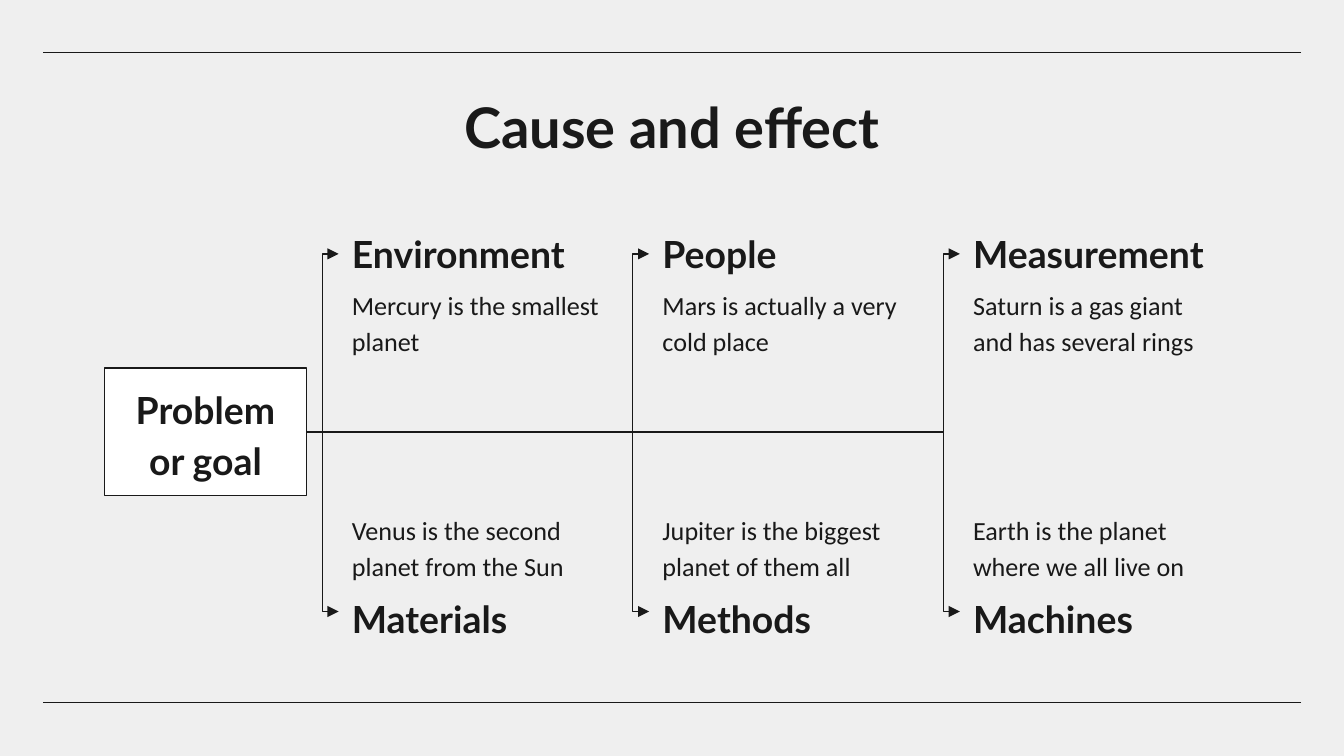
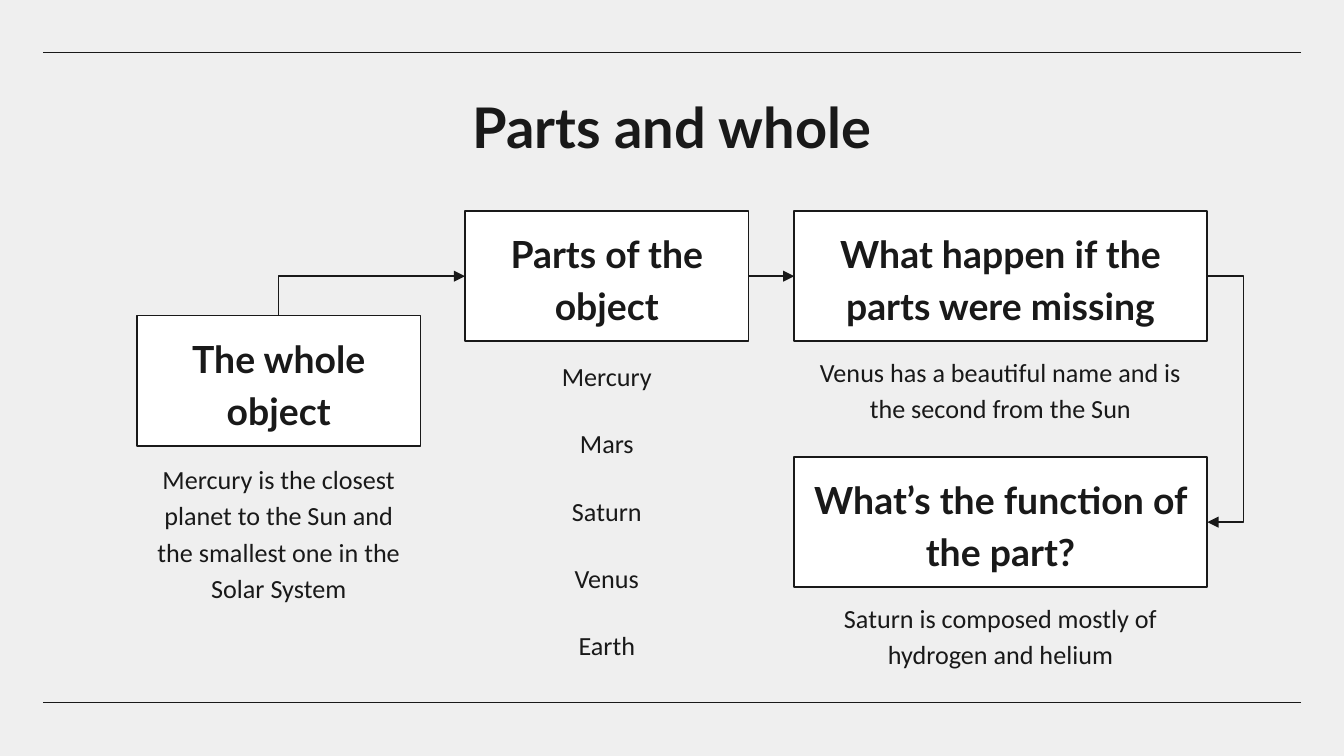
from lxml import etree
from pptx import Presentation
from pptx.dml.color import RGBColor
from pptx.enum.shapes import MSO_CONNECTOR, MSO_SHAPE
from pptx.enum.text import MSO_ANCHOR, PP_ALIGN
from pptx.oxml.ns import qn
from pptx.util import Cm, Pt

INK = RGBColor(0x19, 0x19, 0x19)
PAPER = RGBColor(0xEF, 0xEF, 0xEF)
WHITE = RGBColor(0xFF, 0xFF, 0xFF)
HEADING_FONT, BODY_FONT = "Lato", "Calibri"
LEFT, CENTER = PP_ALIGN.LEFT, PP_ALIGN.CENTER
TOP, MIDDLE, BOTTOM = MSO_ANCHOR.TOP, MSO_ANCHOR.MIDDLE, MSO_ANCHOR.BOTTOM
STRAIGHT, ELBOW = MSO_CONNECTOR.STRAIGHT, MSO_CONNECTOR.ELBOW
RECTANGLE = MSO_SHAPE.RECTANGLE

# All lengths below are in centimetres.
SLIDE_WIDTH, SLIDE_HEIGHT = 25.4, 14.29
RULE_MARGIN = 0.81
RULE_TOPS = (0.99, 13.28)
TITLE_BOX = (2, 1.5, 21.4, 1.6)

GOAL = "Problem or goal"
CAUSES = [  # upper heading and text, lower heading and text
    ("Environment", "Mercury is the smallest planet",
     "Materials", "Venus is the second planet from the Sun"),
    ("People", "Mars is actually a very cold place",
     "Methods", "Jupiter is the biggest planet of them all"),
    ("Measurement", "Saturn is a gas giant and has several rings",
     "Machines", "Earth is the planet where we all live on"),
]

WHOLE = ("The whole object",
         "Mercury is the closest planet to the Sun and the smallest one in the Solar System")
PARTS = ("Parts of the object", ["Mercury", "Mars", "Saturn", "Venus", "Earth"])
QUESTIONS = [
    ("What happen if the parts were missing",
     "Venus has a beautiful name and is the second from the Sun"),
    ("What’s the function of the part?",
     "Saturn is composed mostly of hydrogen and helium"),
]


def write(shape, text, size=14, font=BODY_FONT, bold=False, align=LEFT,
          anchor=TOP, spacing=1.15, side_inset=0.25):
    frame = shape.text_frame
    frame.word_wrap = True
    frame.vertical_anchor = anchor
    frame.margin_left = frame.margin_right = Cm(side_inset)
    frame.margin_top = frame.margin_bottom = Cm(0.25)
    paragraph = frame.paragraphs[0]
    paragraph.alignment = align
    paragraph.line_spacing = spacing
    run = paragraph.add_run()
    run.text = text
    run.font.size = Pt(size)
    run.font.name = font
    run.font.bold = bold
    run.font.color.rgb = INK


def add_text(slide, box, text, **text_format):
    write(slide.shapes.add_textbox(*map(Cm, box)), text, **text_format)


def add_heading(slide, box, text, size=20, **text_format):
    add_text(slide, box, text, size=size, font=HEADING_FONT, bold=True, **text_format)


def add_box(slide, box, text, **text_format):
    """Draw a white outlined rectangle holding a centred heading."""
    shape = slide.shapes.add_shape(RECTANGLE, *map(Cm, box))
    shape.shadow.inherit = False
    shape.fill.solid()
    shape.fill.fore_color.rgb = WHITE
    shape.line.color.rgb = INK
    shape.line.width = Pt(0.75)
    write(shape, text, size=20, font=HEADING_FONT, bold=True, align=CENTER, **text_format)


def add_line(slide, start, end, kind=STRAIGHT, arrow=True):
    connector = slide.shapes.add_connector(kind, *map(Cm, start + end))
    connector.line.color.rgb = INK
    connector.line.width = Pt(0.75)
    properties = connector._element.spPr
    if arrow:
        line = properties.find(qn("a:ln"))
        etree.SubElement(line, qn("a:tailEnd"), type="triangle")
    etree.SubElement(properties, qn("a:effectLst"))
    return connector


def add_elbow(slide, start, end, bend_x):
    """Draw an arrow that runs sideways to bend_x, then up or down, then to its end."""
    connector = add_line(slide, start, end, ELBOW)
    geometry = connector._element.spPr.find(qn("a:prstGeom"))
    adjustments = geometry.find(qn("a:avLst"))
    if adjustments is None:
        adjustments = etree.SubElement(geometry, qn("a:avLst"))
    ratio = (bend_x - start[0]) / (end[0] - start[0])
    etree.SubElement(adjustments, qn("a:gd"), name="adj1", fmla=f"val {round(ratio * 100000)}")


def add_corner(slide, start, end):
    """Draw an arrow that runs up from its start, then right to its end."""
    rise, run = start[1] - end[1], end[0] - start[0]
    middle_x, middle_y = start[0] + run / 2, end[1] + rise / 2
    connector = add_line(slide, (middle_x - rise / 2, middle_y - run / 2),
                         (middle_x + rise / 2, middle_y + run / 2), ELBOW)
    properties = connector._element.spPr
    properties.find(qn("a:prstGeom")).set("prst", "bentConnector2")
    properties.find(qn("a:xfrm")).set("rot", str(270 * 60000))


def add_slide(presentation, title):
    slide = presentation.slides.add_slide(presentation.slide_layouts[6])
    slide.background.fill.solid()
    slide.background.fill.fore_color.rgb = PAPER
    for top in RULE_TOPS:
        add_line(slide, (SLIDE_WIDTH - RULE_MARGIN, top), (RULE_MARGIN, top), arrow=False)
    add_heading(slide, TITLE_BOX, title, size=30, align=CENTER, spacing=1)
    return slide


def build_cause_and_effect(presentation):
    slide = add_slide(presentation, "Cause and effect")
    left, top, width, height = goal_box = (1.98, 6.96, 3.81, 2.41)
    add_box(slide, goal_box, GOAL, anchor=MIDDLE)
    goal_exit = (left + width, top + height / 2)

    first_column, column_step, column_width = 6.4, 5.87, 5.28
    heading_height, text_height = 1.32, 1.65
    upper_top, lower_top = 4.14, 10.9
    for index, (upper, upper_text, lower, lower_text) in enumerate(CAUSES):
        x = first_column + index * column_step
        add_heading(slide, (x, upper_top, column_width, heading_height), upper, anchor=BOTTOM)
        add_text(slide, (x, 5.13, column_width, text_height), upper_text)
        add_text(slide, (x, 9.6, column_width, text_height), lower_text, anchor=BOTTOM)
        add_heading(slide, (x, lower_top, column_width, heading_height), lower)
        for heading_top in (upper_top, lower_top):
            add_elbow(slide, goal_exit, (x, heading_top + heading_height / 2), x - 0.31)


def build_parts_and_whole(presentation):
    slide = add_slide(presentation, "Parts and whole")
    box_height, narrow, wide = 2.46, 5.36, 7.8
    whole_x, parts_x, question_x = 2.59, 8.79, 15.01
    whole_top, parts_top, question_step = 5.97, 3.99, 4.65

    heading, text = WHOLE
    add_box(slide, (whole_x, whole_top, narrow, box_height), heading, anchor=BOTTOM)
    add_text(slide, (whole_x, whole_top + box_height, narrow, 3.38), text, align=CENTER)

    heading, names = PARTS
    add_box(slide, (parts_x, parts_top, narrow, box_height), heading,
            anchor=BOTTOM, side_inset=0.16)
    for index, name in enumerate(names):
        add_text(slide, (parts_x, 6.48 + index * 1.27, narrow, 1.22), name, align=CENTER)

    for index, (heading, text) in enumerate(QUESTIONS):
        top = parts_top + index * question_step
        add_box(slide, (question_x, top, wide, box_height), heading, anchor=BOTTOM)
        add_text(slide, (question_x, top + 2.41, wide, 1.75), text, align=CENTER)

    middle = parts_top + box_height / 2
    question_right = question_x + wide
    add_corner(slide, (whole_x + narrow / 2, whole_top), (parts_x, middle))
    add_line(slide, (parts_x + narrow, middle), (question_x, middle))
    add_elbow(slide, (question_right, middle),
              (question_right + 0.01, middle + question_step), 23.5)


def main():
    presentation = Presentation()
    presentation.slide_width = Cm(SLIDE_WIDTH)
    presentation.slide_height = Cm(SLIDE_HEIGHT)
    build_cause_and_effect(presentation)
    build_parts_and_whole(presentation)
    presentation.save("out.pptx")


if __name__ == "__main__":
    main()
